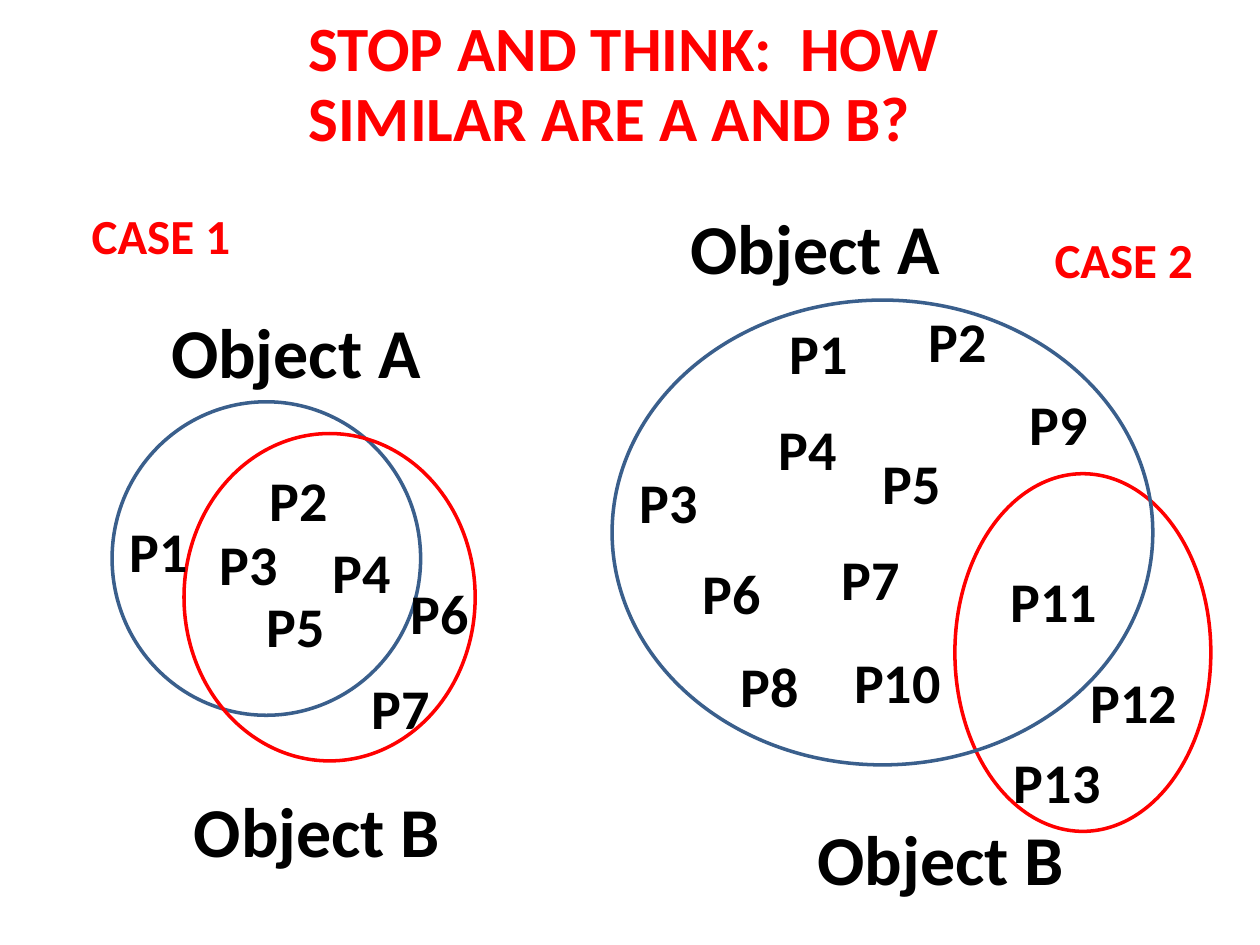
from dataclasses import dataclass

from pptx import Presentation
from pptx.dml.color import RGBColor
from pptx.enum.shapes import MSO_SHAPE as Preset
from pptx.enum.text import MSO_AUTO_SIZE as AutoSize
from pptx.shapes.shapetree import GroupShapes, SlideShapes
from pptx.util import Cm, Pt

RED = "FF0000"
BLUE = "3A5F8C"
BLACK = "000000"


@dataclass(frozen=True)
class Box:
    """A rectangle in centimetres."""
    left: float
    top: float
    width: float
    height: float

    def lengths(self) -> tuple[Cm, Cm, Cm, Cm]:
        return Cm(self.left), Cm(self.top), Cm(self.width), Cm(self.height)


@dataclass(frozen=True)
class Label:
    text: str
    box: Box
    size: int
    color: str = BLACK
    spacing: float = 1.0


@dataclass(frozen=True)
class Case:
    """Two overlapping sets, with the place of each property label."""
    set_a: Box
    set_b: Box
    b_behind: bool
    properties: dict[str, tuple[float, float]]
    labels: tuple[Label, ...]


def object_a(left: float, top: float) -> Label:
    return Label("Object A", Box(left, top, 7.37, 2.01), 40)


def object_b(left: float, top: float) -> Label:
    return Label("Object B", Box(left, top, 6.2, 1.96), 40)


def case_heading(number: int, left: float, top: float) -> Label:
    return Label(f"CASE {number}", Box(left, top, 3.81, 1.45), 28, RED)


TITLE = Label("STOP AND THINK:  HOW SIMILAR ARE A AND B?",
              Box(5.97, 0.2, 16.23, 3.1), 36, RED, 0.92)

CASES = (
    Case(
        set_a=Box(2.26, 8.1, 6.22, 6.32),
        set_b=Box(3.71, 8.74, 5.87, 6.6),
        b_behind=False,
        properties={
            "P3": (4.17, 10.54), "P4": (6.45, 10.72), "P6": (8.03, 11.53),
            "P7": (7.24, 13.46), "P5": (5.13, 11.79), "P2": (5.18, 9.25),
            "P1": (2.36, 10.29),
        },
        labels=(object_a(3.2, 6.1), object_b(3.66, 15.75),
                case_heading(1, 1.6, 4.01)),
    ),
    Case(
        set_a=Box(12.34, 6.05, 10.9, 9.37),
        set_b=Box(19.25, 9.55, 5.16, 7.21),
        b_behind=True,
        properties={
            "P3": (12.65, 9.3), "P4": (15.44, 8.23), "P6": (13.92, 11.13),
            "P7": (16.71, 10.85), "P5": (17.55, 8.92), "P2": (18.47, 6.05),
            "P1": (15.67, 6.3), "P11": (20.12, 11.3), "P10": (16.97, 12.93),
            "P9": (20.5, 7.72), "P8": (14.68, 13.0), "P12": (21.74, 13.34),
            "P13": (20.19, 14.94),
        },
        labels=(object_a(13.67, 3.99), object_b(16.23, 16.31),
                case_heading(2, 21.01, 4.5)),
    ),
)


def rgb(color: str) -> RGBColor:
    return RGBColor.from_string(color)


def draw_set(shapes: GroupShapes, box: Box, color: str) -> None:
    shape = shapes.add_shape(Preset.OVAL, *box.lengths())
    shape.shadow.inherit = False
    shape.fill.background()
    shape.line.color.rgb = rgb(color)
    shape.line.width = Pt(2)


def draw_label(shapes: SlideShapes | GroupShapes, label: Label) -> None:
    frame = shapes.add_textbox(*label.box.lengths()).text_frame
    frame.word_wrap = True
    frame.auto_size = AutoSize.SHAPE_TO_FIT_TEXT
    paragraph = frame.paragraphs[0]
    paragraph.text = label.text
    paragraph.line_spacing = label.spacing
    paragraph.font.name = "Calibri"
    paragraph.font.size = Pt(label.size)
    paragraph.font.bold = True
    paragraph.font.color.rgb = rgb(label.color)


def draw_case(shapes: SlideShapes, case: Case) -> None:
    diagram = shapes.add_group_shape().shapes

    # The two sets, back to front
    sets = [(case.set_a, BLUE), (case.set_b, RED)]
    for box, color in reversed(sets) if case.b_behind else sets:
        draw_set(diagram, box, color)

    # Properties of the objects
    for name, (left, top) in case.properties.items():
        draw_label(diagram, Label(name, Box(left, top, 2.34, 1.63), 32))

    # Object names and case heading
    for label in case.labels:
        draw_label(shapes, label)


def main() -> None:
    presentation = Presentation()
    presentation.slide_width, presentation.slide_height = Cm(25.4), Cm(19.05)
    slide = presentation.slides.add_slide(presentation.slide_layouts[6])

    draw_label(slide.shapes, TITLE)
    for case in CASES:
        draw_case(slide.shapes, case)

    presentation.save("out.pptx")


if __name__ == "__main__":
    main()
